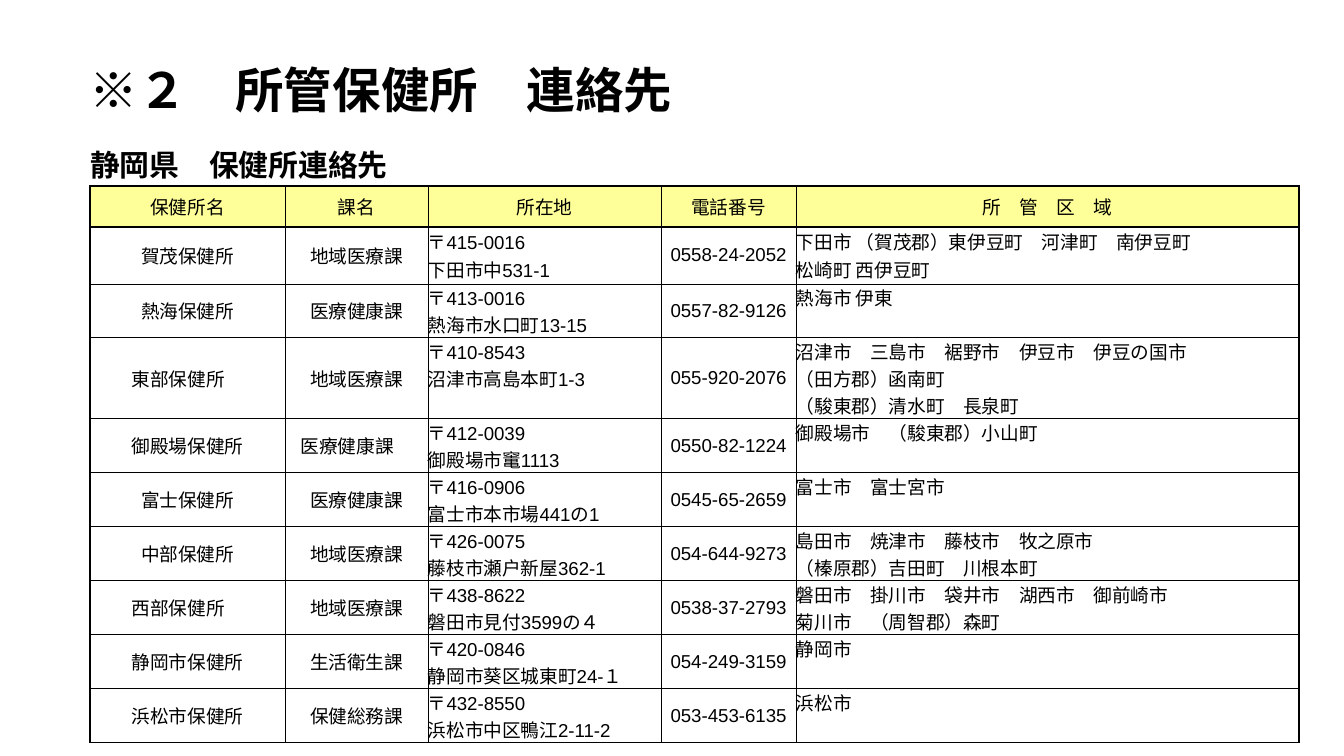
from dataclasses import dataclass

from lxml import etree
from pptx import Presentation
from pptx import util as u
from pptx.dml.color import RGBColor
from pptx.enum import text as t
from pptx.oxml import ns

PX = 914400 / 134.4
COLORS = {"ink": "000000", "head": "FFFF99"}
LATIN, KANJI = "Arial", "Noto Sans CJK JP"
PLAIN = "{2D5ABB26-0587-4C30-8999-92F81FD0307C}"  # no style, no grid
THIN, THICK = 0.5, 1
LEFT, MID = t.PP_ALIGN.LEFT, t.PP_ALIGN.CENTER
WIDTHS = [195, 143, 233, 135, 503]
HEADS = ["保健所名", "課名", "所在地", "電話番号", "所　管　区　域"]


@dataclass
class Office:
    name: str
    unit: str
    phone: str
    place: list[str]
    area: list[str]

    @property
    def size(self) -> int:
        return max(len(self.place), len(self.area))


OFFICES = [
    Office("賀茂保健所", "地域医療課", "0558-24-2052", ["〒415-0016", "下田市中531-1"],
           ["下田市 （賀茂郡）東伊豆町　河津町　南伊豆町", "松崎町 西伊豆町"]),
    Office("熱海保健所", "医療健康課", "0557-82-9126",
           ["〒413-0016", "熱海市水口町13-15"], ["熱海市 伊東"]),
    Office("東部保健所　", "地域医療課", "055-920-2076", ["〒410-8543", "沼津市高島本町1-3"],
           ["沼津市　三島市　裾野市　伊豆市　伊豆の国市", "（田方郡）函南町", "（駿東郡）清水町　長泉町"]),
    Office("御殿場保健所", "医療健康課　", "0550-82-1224",
           ["〒412-0039", "御殿場市竃1113"], ["御殿場市　（駿東郡）小山町"]),
    Office("富士保健所", "医療健康課", "0545-65-2659",
           ["〒416-0906", "富士市本市場441の1"], ["富士市　富士宮市"]),
    Office("中部保健所", "地域医療課", "054-644-9273", ["〒426-0075", "藤枝市瀬戸新屋362-1"],
           ["島田市　焼津市　藤枝市　牧之原市", "（榛原郡）吉田町　川根本町"]),
    Office("西部保健所　", "地域医療課", "0538-37-2793", ["〒438-8622", "磐田市見付3599の４"],
           ["磐田市　掛川市　袋井市　湖西市　御前崎市", "菊川市　（周智郡）森町"]),
    Office("静岡市保健所", "生活衛生課", "054-249-3159",
           ["〒420-0846", "静岡市葵区城東町24-１"], ["静岡市"]),
    Office("浜松市保健所", "保健総務課", "053-453-6135",
           ["〒432-8550", "浜松市中区鴨江2-11-2"], ["浜松市"]),
]


def px(n: int) -> int:
    return round(n * PX)


def write(frame, words: str, size=10, font=KANJI, bold=False, align=LEFT) -> None:
    para = frame.paragraphs[0]
    para.alignment = align
    if not words:  # keeps an empty cell as low as its row
        para._p.get_or_add_endParaRPr().set("sz", str(size * 100))
        return
    run = para.add_run()
    run.text = words
    run.font.size, run.font.bold, run.font.name = u.Pt(size), bold, font
    run.font.color.rgb = RGBColor.from_string(COLORS["ink"])
    asian = etree.Element(ns.qn("a:ea"), typeface=KANJI)
    run.font._element.find(ns.qn("a:latin")).addnext(asian)


def edge(cell, **sides: float) -> None:
    """Draw borders in points on the sides L, R, T and B; 0 means none."""
    props = cell._tc.get_or_add_tcPr()
    for side in "LRTB":
        wide = sides.get(side, 0)
        line = etree.SubElement(props, ns.qn("a:ln" + side), w=str(u.Pt(wide)))
        if wide:
            fill = etree.SubElement(line, ns.qn("a:solidFill"))
            etree.SubElement(fill, ns.qn("a:srgbClr"), val=COLORS["ink"])
        else:
            etree.SubElement(line, ns.qn("a:noFill"))


def fill_cell(cell, words: str, sides: dict, back="", **form) -> None:
    cell.margin_left = cell.margin_right = cell.margin_top = cell.margin_bottom = 0
    cell.vertical_anchor = t.MSO_ANCHOR.MIDDLE
    edge(cell, **sides)
    if back:
        cell.fill.solid()
        cell.fill.fore_color.rgb = RGBColor.from_string(COLORS[back])
    else:
        cell.fill.background()
    write(cell.text_frame, words, **form)


def walls(col: int) -> dict:
    return {"L": THIN if col else THICK,
            "R": THICK if col == len(WIDTHS) - 1 else THIN}


def add_office(grid, top: int, office: Office, first: bool, last: bool) -> None:
    cols = [[office.name], [office.unit], office.place, [office.phone], office.area]
    for col, lines in enumerate(cols):
        joined = col in (0, 1, 3)
        for i in range(office.size):
            sides = walls(col)
            if joined or i == 0:
                sides["T"] = THICK if first else THIN
            if joined or i == office.size - 1:
                sides["B"] = THICK if last else THIN
            fill_cell(grid.cell(top + i, col), lines[i] if i < len(lines) else "",
                      sides, font=LATIN if col in (2, 3) else KANJI,
                      align=MID if joined else LEFT)
        if joined:
            grid.cell(top, col).merge(grid.cell(top + office.size - 1, col))


def add_grid(slide) -> None:
    highs = [44, 41, 29, 28] + [27] * (sum(o.size for o in OFFICES) - 2)
    grid = slide.shapes.add_table(len(highs), len(WIDTHS), px(90), px(142),
                                  px(sum(WIDTHS)), px(sum(highs))).table
    grid.first_row = grid.horz_banding = False
    grid._tbl.tblPr.find(ns.qn("a:tableStyleId")).text = PLAIN
    for row, high in zip(grid.rows, highs):
        row.height = px(high)
    for col, wide in enumerate(WIDTHS):
        grid.columns[col].width = px(wide)
        fill_cell(grid.cell(0, col), "" if col else "静岡県　保健所連絡先",
                  {"B": THICK}, size=16, bold=True)
        fill_cell(grid.cell(1, col), HEADS[col],
                  walls(col) | {"T": THICK, "B": THICK}, back="head", align=MID)
    grid.cell(0, 0).merge(grid.cell(0, 3))
    top = 2
    for office in OFFICES:
        add_office(grid, top, office, office is OFFICES[0], office is OFFICES[-1])
        top += office.size


def main() -> None:
    deck = Presentation()
    deck.slide_width, deck.slide_height = px(1344), px(756)
    slide = deck.slides.add_slide(deck.slide_layouts[5])
    title = slide.shapes.title
    title.left, title.top, title.width, title.height = map(px, (16, 34, 731, 110))
    title.text_frame.auto_size = t.MSO_AUTO_SIZE.NONE
    title.text_frame.vertical_anchor = t.MSO_ANCHOR.MIDDLE
    write(title.text_frame, "※２　所管保健所　連絡先", size=26, font=LATIN, bold=True, align=MID)
    add_grid(slide)
    deck.save("out.pptx")


if __name__ == "__main__":
    main()
